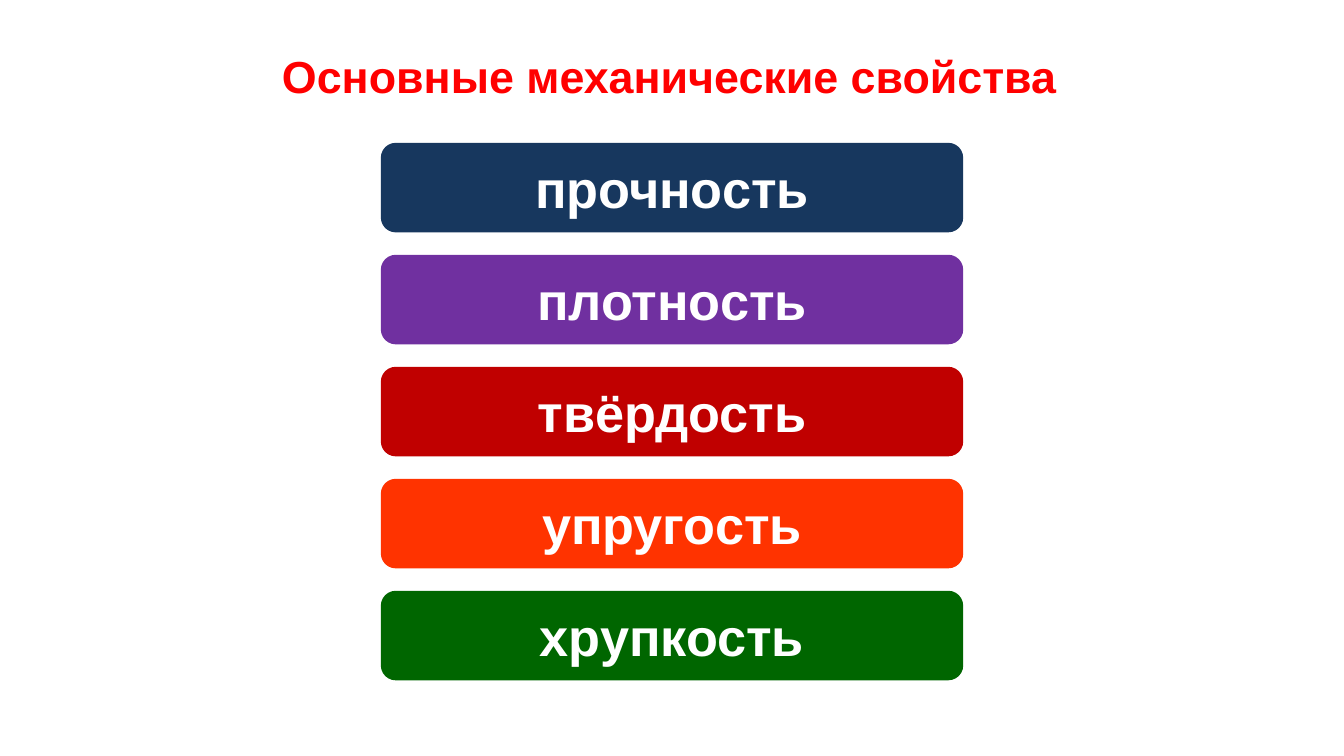
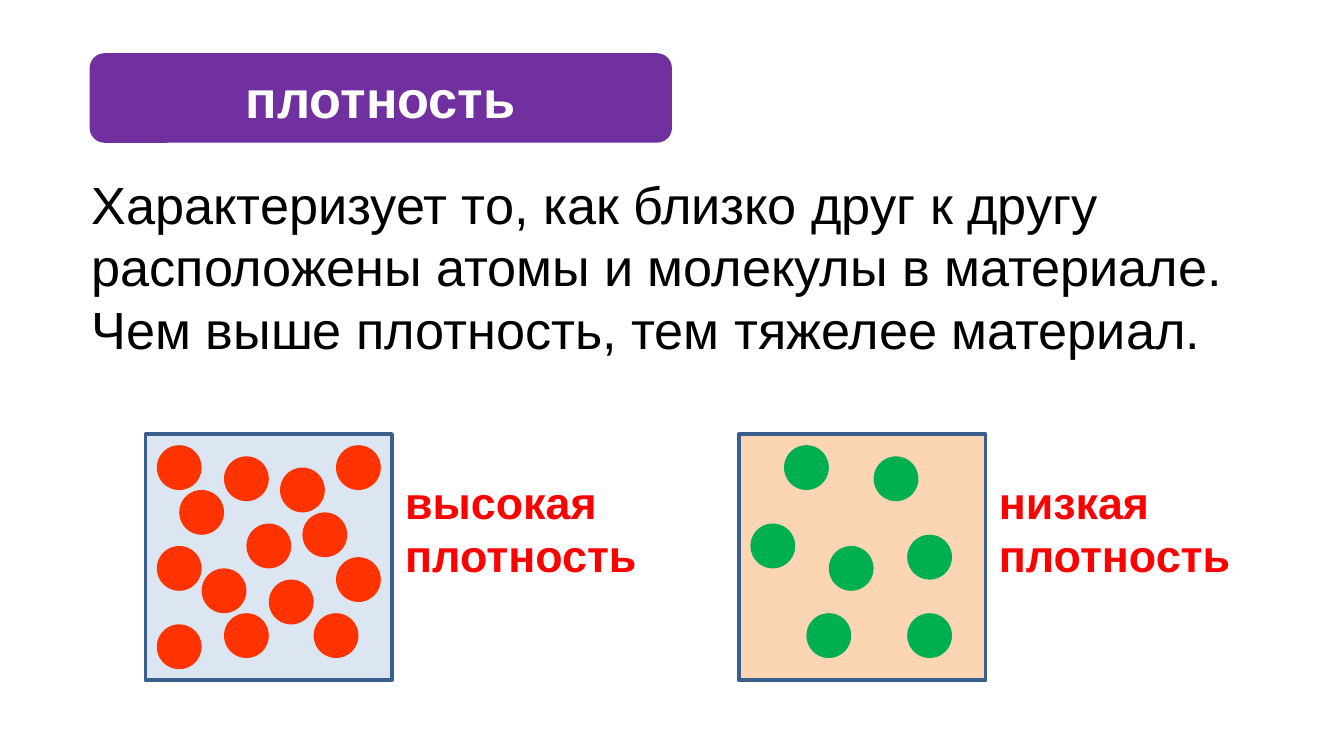
from pptx import Presentation
from pptx.dml.color import RGBColor
from pptx.enum.shapes import MSO_SHAPE
from pptx.enum.text import MSO_ANCHOR, PP_ALIGN
from pptx.util import Cm, Pt

COLORS = {
    "navy": "17375E",
    "purple": "7030A0",
    "crimson": "C00000",
    "orange": "FF3300",
    "forest": "006600",
    "red": "FF0000",
    "green": "00B050",
    "pale blue": "DCE6F2",
    "peach": "FCD5B5",
    "outline": "3A5F8C",
    "black": "000000",
    "white": "FFFFFF",
}
FONT = "Arial"

TITLE = "Основные механические свойства"
PROPERTIES = [
    ("прочность", "navy"),
    ("плотность", "purple"),
    ("твёрдость", "crimson"),
    ("упругость", "orange"),
    ("хрупкость", "forest"),
]
DENSITY = PROPERTIES[1]
DEFINITION = (
    "Характеризует то, как близко друг к другу расположены атомы и молекулы "
    "в материале. Чем выше плотность, тем тяжелее материал."
)
SAMPLES = [
    {
        "caption": "высокая плотность",
        "left": 13,
        "fill": "pale blue",
        "atom": "orange",
        "atoms": [(3, 5), (7, 2), (9, 8), (17, 1), (1, 1), (1, 10), (5, 12),
                  (1, 17), (11, 13), (7, 16), (14, 7), (17, 11), (15, 16), (12, 3)],
    },
    {
        "caption": "низкая плотность",
        "left": 66,
        "fill": "peach",
        "atom": "green",
        "atoms": [(1, 8), (12, 2), (15, 9), (8, 10), (6, 16), (4, 1), (15, 16)],
    },
]

GRID_STEP = 2.54 / 12
PAGE_SIZE = (120, 67.5)
BAR_SIZE = (52, 8)
BAR_GAP = 2
BARS_TOP = 12.75
SAMPLE_TOP = 38.75
SAMPLE_SIDE = 22
ATOM_SIDE = 4


def grid(*steps):
    return [Cm(step * GRID_STEP) for step in steps]


def color(name):
    return RGBColor.from_string(COLORS[name])


def write(box, text, size, color_name, bold=True, align=PP_ALIGN.LEFT):
    frame = box.text_frame
    frame.word_wrap = True
    frame.text = text
    para = frame.paragraphs[0]
    para.alignment = align
    for span in para.runs:
        span.font.name = FONT
        span.font.size = Pt(size)
        span.font.bold = bold
        span.font.color.rgb = color(color_name)


def add_text(page, text, place, size, color_name, bold=True):
    box = page.shapes.add_textbox(*grid(*place))
    write(box, text, size, color_name, bold)


def add_figure(page, kind, place, fill, outline=None):
    figure = page.shapes.add_shape(kind, *grid(*place))
    figure.shadow.inherit = False
    figure.fill.solid()
    figure.fill.fore_color.rgb = color(fill)
    if outline:
        figure.line.color.rgb = color(outline)
        figure.line.width = Pt(2)
    else:
        figure.line.fill.background()
    return figure


def add_bar(page, label, fill, left, top):
    bar = add_figure(page, MSO_SHAPE.ROUNDED_RECTANGLE, (left, top, *BAR_SIZE), fill)
    bar.text_frame.vertical_anchor = MSO_ANCHOR.MIDDLE
    write(bar, label, 28, "white", align=PP_ALIGN.CENTER)


def add_sample(page, sample):
    left = sample["left"]
    add_figure(page, MSO_SHAPE.RECTANGLE,
               (left, SAMPLE_TOP, SAMPLE_SIDE, SAMPLE_SIDE), sample["fill"], "outline")
    for across, down in sample["atoms"]:
        add_figure(page, MSO_SHAPE.OVAL,
                   (left + across, SAMPLE_TOP + down, ATOM_SIDE, ATOM_SIDE), sample["atom"])
    add_text(page, sample["caption"],
             (left + SAMPLE_SIDE, SAMPLE_TOP + 3, 24, 10.9), 24, "red")


def build_properties(page):
    add_text(page, TITLE, (24, 3.75, 72, 6), 24, "red")
    left = (PAGE_SIZE[0] - BAR_SIZE[0]) / 2
    for row, (label, fill) in enumerate(PROPERTIES):
        add_bar(page, label, fill, left, BARS_TOP + row * (BAR_SIZE[1] + BAR_GAP))


def build_density(page):
    add_text(page, DEFINITION, (7, 14.75, 107, 18.1), 28, "black", bold=False)
    add_bar(page, *DENSITY, 8, 4.75)
    for sample in SAMPLES:
        add_sample(page, sample)


def main():
    deck = Presentation()
    deck.slide_width, deck.slide_height = grid(*PAGE_SIZE)
    for build in (build_properties, build_density):
        build(deck.slides.add_slide(deck.slide_layouts[6]))
    deck.save("out.pptx")


if __name__ == "__main__":
    main()
